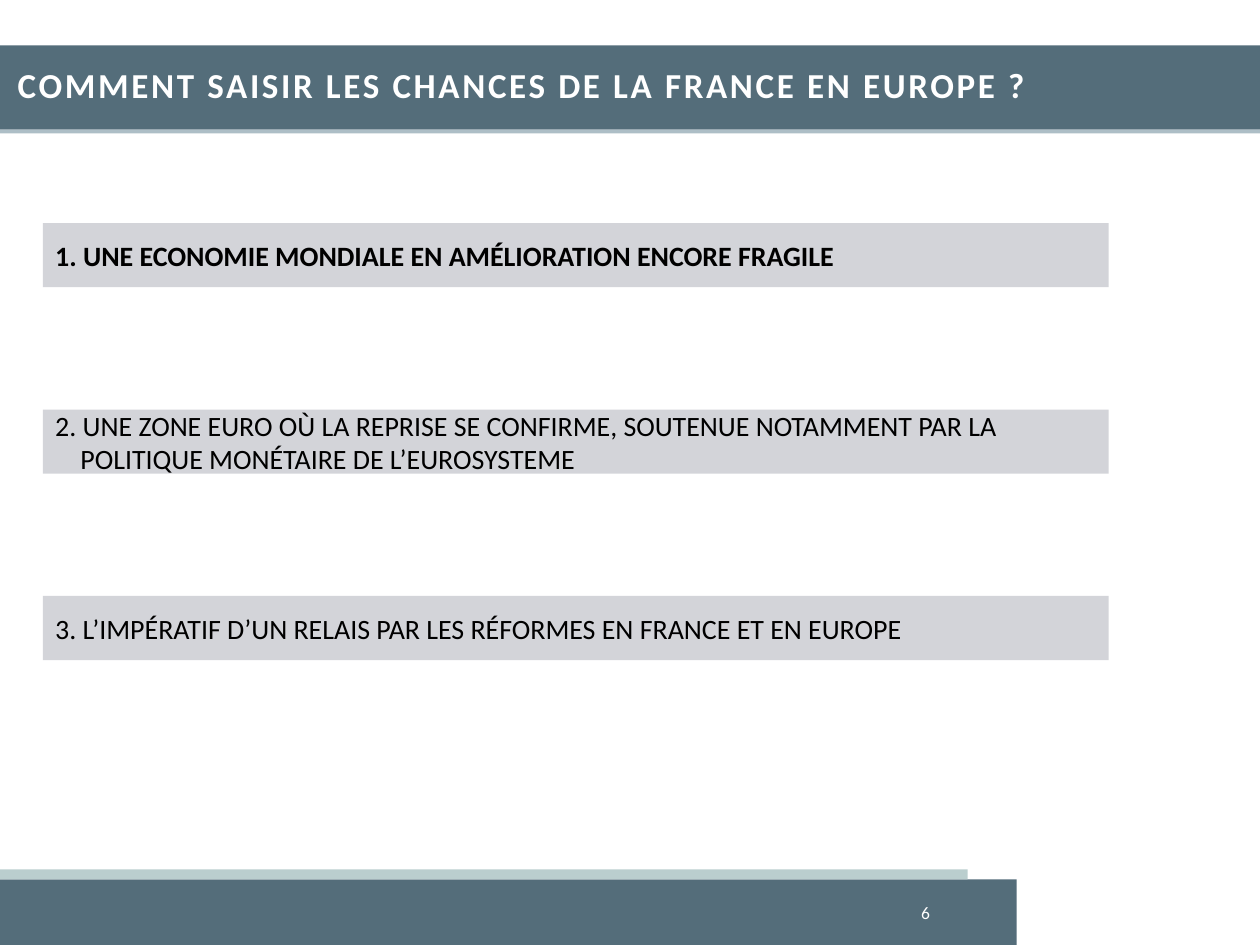
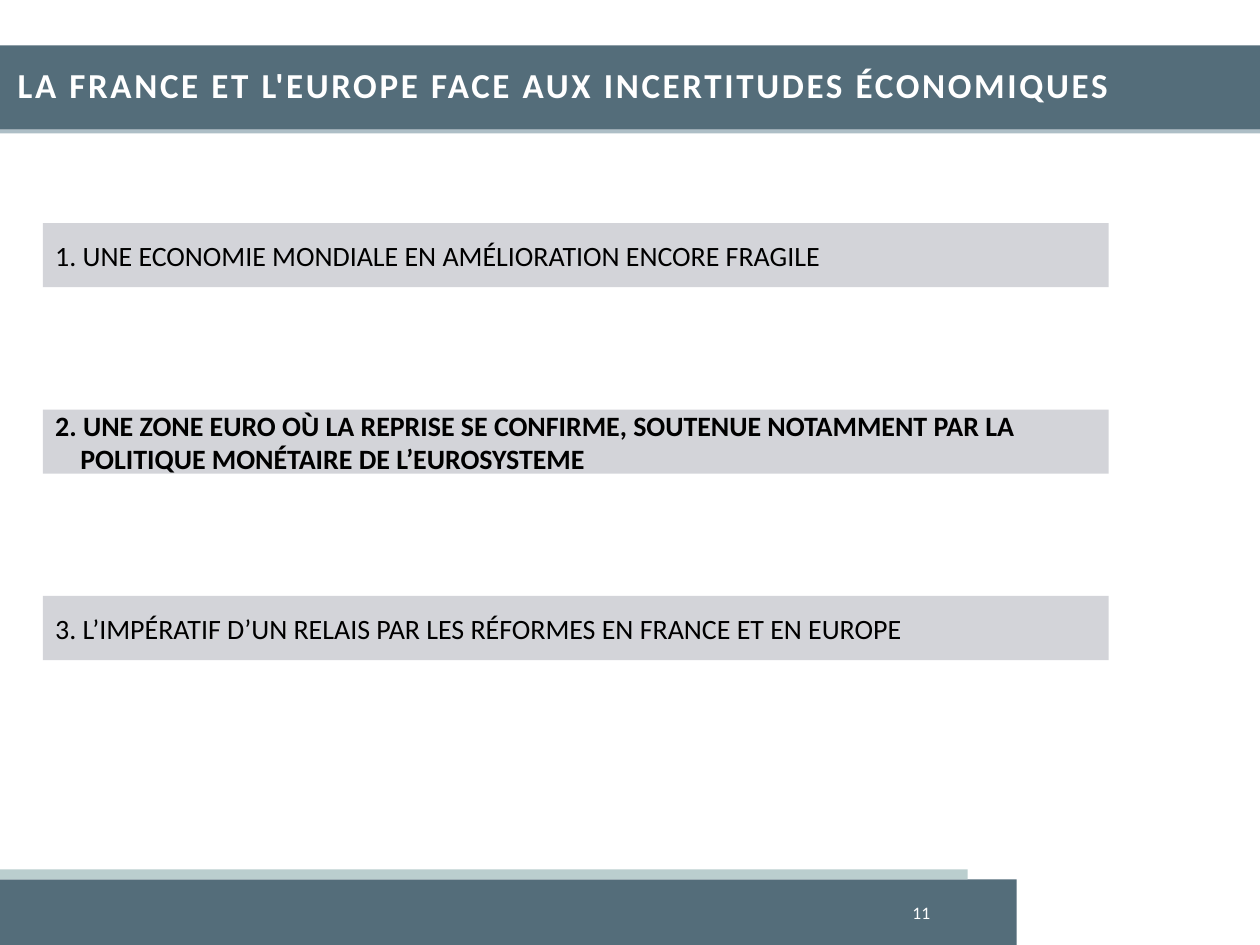
from pptx import Presentation
from pptx.dml.color import RGBColor
from pptx.enum.shapes import MSO_SHAPE
from pptx.enum.text import MSO_ANCHOR, MSO_AUTO_SIZE, PP_ALIGN
from pptx.util import Emu, Pt

EMU_PER_PX = 9144
FONT = "Calibri"
SLATE, SAGE, MIST, PALE, WHITE, BLACK = (
    "546D7A", "BACECE", "ADBEC6", "D3D4D9", "FFFFFF", "000000")

BANDS = [
    ((0, 698, 807, 52), SLATE),
    ((0, 690, 768, 8), SAGE),
    ((0, 36, 1000, 67), SLATE),
    ((0, 103, 1000, 3), MIST),
]
CHAPTERS = [
    "1. UNE ECONOMIE MONDIALE EN AMÉLIORATION ENCORE FRAGILE",
    "2. UNE ZONE EURO OÙ LA REPRISE SE CONFIRME, SOUTENUE NOTAMMENT PAR LA "
    "POLITIQUE MONÉTAIRE DE L’EUROSYSTEME",
    "3. L’IMPÉRATIF D’UN RELAIS PAR LES RÉFORMES EN FRANCE ET EN EUROPE",
]
AGENDAS = [
    ("COMMENT SAISIR LES CHANCES DE LA FRANCE EN EUROPE ?", 6, 0),
    ("LA FRANCE ET L'EUROPE FACE AUX INCERTITUDES ÉCONOMIQUES", 11, 1),
]
CHAPTER_TOP, CHAPTER_STEP = 177, 148


def px(length):
    return Emu(length * EMU_PER_PX)


def color(hex_code):
    return RGBColor.from_string(hex_code)


def write(shape, text, size=16, fill=BLACK, bold=False, align=PP_ALIGN.LEFT,
          anchor=MSO_ANCHOR.MIDDLE, hanging=0, spacing=0):
    frame = shape.text_frame
    frame.word_wrap = True
    frame.auto_size = MSO_AUTO_SIZE.NONE
    frame.vertical_anchor = anchor
    paragraph = frame.paragraphs[0]
    paragraph.alignment = align
    if hanging:
        properties = paragraph._p.get_or_add_pPr()
        properties.set("marL", str(px(hanging)))
        properties.set("indent", str(px(-hanging)))
    run = paragraph.add_run()
    run.text = text
    run.font.name = FONT
    run.font.size = Pt(size)
    run.font.bold = bold
    run.font.color.rgb = color(fill)
    if spacing:
        run.font._element.set("spc", str(spacing))


class Deck:
    def __init__(self):
        self.presentation = Presentation()
        self.presentation.slide_width = px(1000)
        self.presentation.slide_height = px(750)
        self.layout = self.presentation.slide_layouts.get_by_name("Title Only")
        self.slide = None

    def new_slide(self):
        self.slide = self.presentation.slides.add_slide(self.layout)

    def bar(self, box, fill):
        bar = self.slide.shapes.add_shape(MSO_SHAPE.RECTANGLE, *map(px, box))
        bar.shadow.inherit = False
        bar.fill.solid()
        bar.fill.fore_color.rgb = color(fill)
        bar.line.fill.background()
        return bar

    def share_bands(self):
        for order, (box, fill) in enumerate(BANDS):
            band = self.bar(box, fill).element
            band.nvSpPr.cNvPr.set("id", str(100 + order))
            self.layout.shapes.element.insert(2 + order, band)

    def title(self, text):
        title = self.slide.shapes.title
        title.left, title.top, title.width, title.height = map(
            px, (4, 45, 996, 58))
        write(title, text, size=20, fill=WHITE, bold=True,
              anchor=MSO_ANCHOR.TOP, spacing=150)

    def chapter(self, position, text, current):
        top = CHAPTER_TOP + position * CHAPTER_STEP
        write(self.bar((34, top, 846, 51), PALE), text, bold=current,
              hanging=20)

    def page_number(self, number):
        label = self.slide.shapes.add_textbox(*map(px, (640, 708, 108, 33)))
        write(label, str(number), size=10, fill=WHITE, align=PP_ALIGN.RIGHT)


def main():
    deck = Deck()
    for order, (heading, number, current) in enumerate(AGENDAS):
        deck.new_slide()
        if order == 0:
            deck.share_bands()
        deck.title(heading)
        for position, chapter in enumerate(CHAPTERS):
            deck.chapter(position, chapter, position == current)
        deck.page_number(number)
    deck.presentation.save("out.pptx")


if __name__ == "__main__":
    main()
